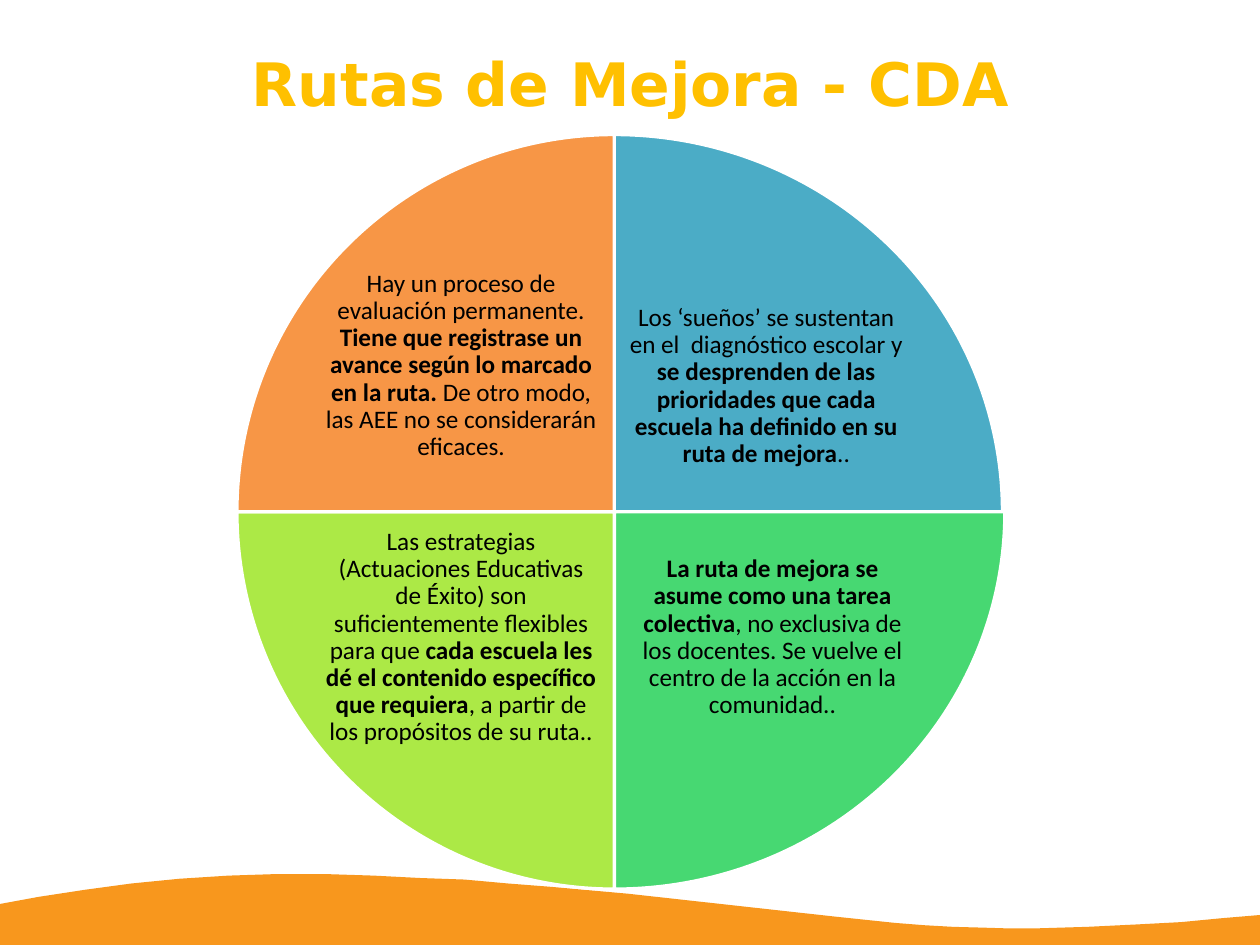
import pptx
import pptx.util
import pptx.dml.color
import pptx.enum.shapes
import pptx.enum.text

Pt = pptx.util.Pt
Align = pptx.enum.text.PP_ALIGN
Anchor = pptx.enum.text.MSO_ANCHOR
Shape = pptx.enum.shapes.MSO_SHAPE

HUES = {"gold": "FFC000", "blue": "4BACC6", "green": "47D872", "lime": "ACE946",
        "orange": "F79646", "wave": "F8971D", "white": "FFFFFF", "black": "000000"}
TITLE = "Rutas de Mejora - CDA"
PARTS = [
    {"hue": "blue", "turn": (162, 0), "pie": (143.5, 493), "box": (395.5, 174, 182, 142.5),
     "runs": [("Los ‘sueños’ se sustentan en el  diagnóstico escolar y ", False),
              ("se desprenden de las prioridades que cada escuela ha definido en su ruta de mejora", True),
              ("..", False)]},
    {"hue": "green", "turn": (0, 54), "pie": (142.5, 495.5), "box": (399, 333.5, 183, 142.5),
     "runs": [("La ruta de mejora se asume como una tarea colectiva", True),
              (", no exclusiva de los docentes. Se vuelve el centro de la acción en la comunidad..", False)]},
    {"hue": "lime", "turn": (54, 108), "pie": (150.5, 479), "box": (204.5, 333.5, 176.5, 142.5),
     "runs": [("Las estrategias (Actuaciones Educativas de Éxito) son suficientemente flexibles para que ", False),
              ("cada escuela les dé el contenido específico que requiera", True),
              (", a partir de los propósitos de su ruta..", False)]},
    {"hue": "orange", "turn": (108, 162), "pie": (150.5, 479), "box": (204.5, 161, 176.5, 142.5),
     "runs": [("Hay un proceso de evaluación permanente.", False),
              (" Tiene que registrase un avance según lo marcado en la ruta. ", True),
              ("De otro modo, las AEE no se considerarán eficaces.", False)]},
]
PIE_TOP, PIE_TALL = 85.5, 479
WIDE, TALL = 800, 600
CREST = [(0, 574), (24.5, 569.5), (54, 565), (83.5, 561), (114, 558), (145, 556),
         (175.5, 555), (206.5, 555), (237.5, 556), (266.5, 557.5), (295, 558.5),
         (322.5, 561), (348.5, 563), (399, 567.5), (530, 582), (568, 586),
         (587, 587.5), (605, 588.5), (623, 589), (640, 589.5), (657.5, 589.5),
         (690.5, 588.5), (721.5, 587), (750, 585.5), (776, 583), (WIDE, 581)]
FRAME = {"word_wrap": True, "auto_size": pptx.enum.text.MSO_AUTO_SIZE.NONE}
SIDES = ("margin_left", "margin_top", "margin_right", "margin_bottom")


def put(item, form):
    for name, value in form.items():
        setattr(item, name, value)


def tint(hue):
    return pptx.dml.color.RGBColor.from_string(HUES[hue])


def paint(shape, hue):
    shape.shadow.inherit = False
    shape.fill.solid()
    shape.fill.fore_color.rgb = tint(hue)


def write(shape, runs, inset, frame, para, font, hue):
    text = shape.text_frame
    put(text, {**FRAME, **frame, **dict.fromkeys(SIDES, Pt(inset))})
    line = text.paragraphs[0]
    put(line, {"alignment": Align.CENTER, **para})
    for words, bold in runs:
        run = line.add_run()
        run.text = words
        put(run.font, {**font, "bold": bold})
        run.font.color.rgb = tint(hue)


deck = pptx.Presentation()
put(deck, {"slide_width": Pt(WIDE), "slide_height": Pt(TALL)})
slide = deck.slides.add_slide(deck.slide_layouts[5])
shapes = slide.shapes

curve = [(Pt(x), Pt(y)) for x, y in CREST + [(WIDE, TALL), (0, TALL)]]
pen = shapes.build_freeform(*curve[0])
pen.add_line_segments(curve[1:])
wave = pen.convert_to_shape()
paint(wave, "wave")
wave.line.fill.background()

head = shapes.title
put(head, {"left": Pt(69), "top": Pt(31), "width": Pt(662.5), "height": Pt(63.5)})
write(head, [(TITLE, True)], 0, {"vertical_anchor": Anchor.TOP},
      {"line_spacing": Pt(44.1)}, {"name": "DejaVu Sans", "size": Pt(38)}, "gold")

for part in PARTS:
    left, width = part["pie"]
    pie = shapes.add_shape(Shape.PIE, Pt(left), Pt(PIE_TOP), Pt(width), Pt(PIE_TALL))
    for spot, turn in enumerate(part["turn"]):
        pie.adjustments[spot] = turn
    paint(pie, part["hue"])
    pie.line.color.rgb = tint("white")
    pie.line.width = Pt(2)
    box = shapes.add_textbox(*map(Pt, part["box"]))
    write(box, part["runs"], 1.5, {"vertical_anchor": Anchor.MIDDLE},
          {"line_spacing": 0.9}, {"name": "Calibri", "size": Pt(16)}, "black")

deck.save("out.pptx")
